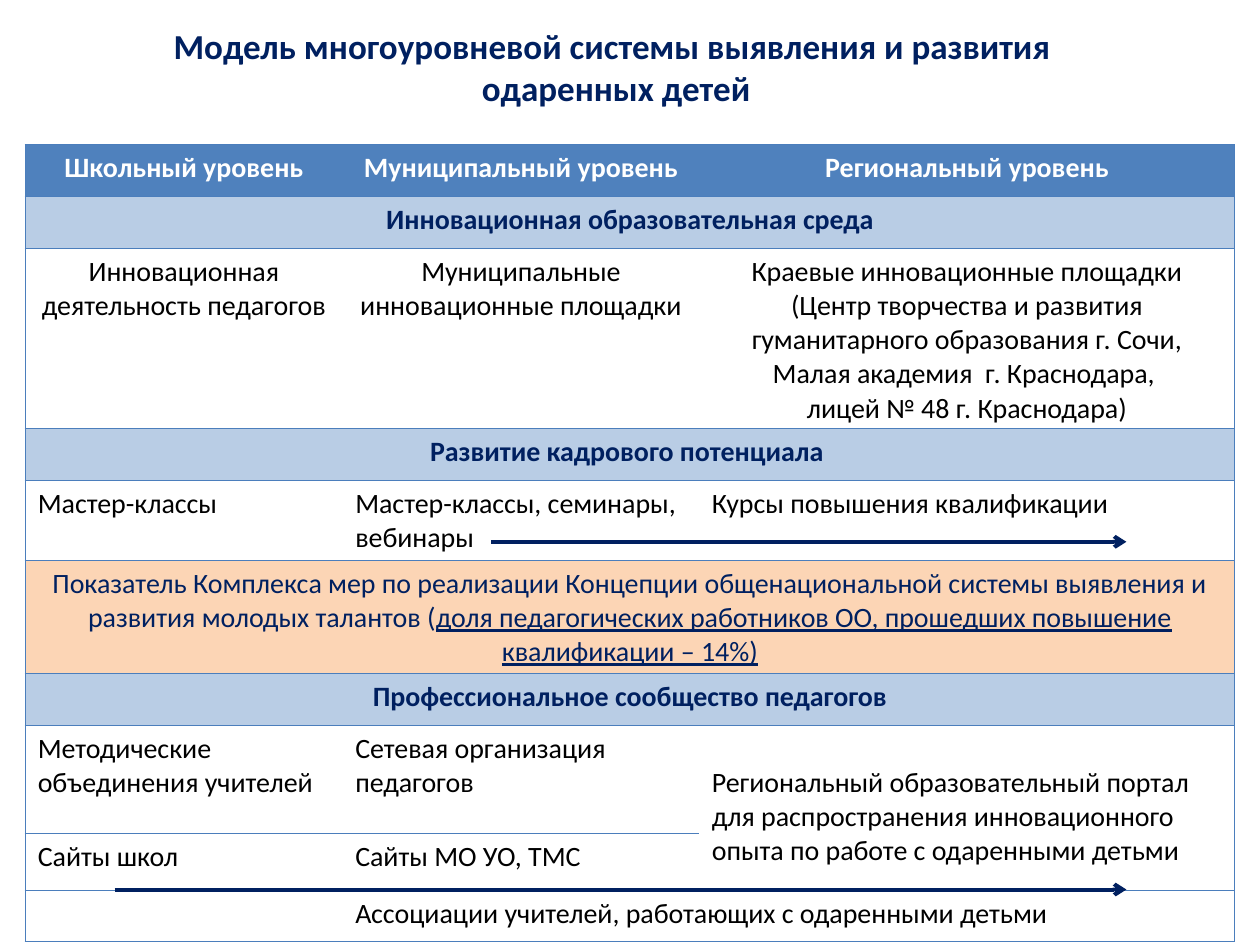
from lxml.etree import SubElement
from pptx import Presentation
from pptx.dml.color import RGBColor
from pptx.enum.shapes import MSO_CONNECTOR
from pptx.enum.text import MSO_ANCHOR, PP_ALIGN
from pptx.oxml.ns import qn
from pptx.util import Inches, Pt

NAVY = RGBColor(0x00, 0x20, 0x60)
BLACK = RGBColor(0x00, 0x00, 0x00)
WHITE = RGBColor(0xFF, 0xFF, 0xFF)
BLUE = RGBColor(0x4F, 0x81, 0xBD)
PALE_BLUE = RGBColor(0xB9, 0xCD, 0xE5)
PEACH = RGBColor(0xFC, 0xD5, 0xB5)
BORDER = RGBColor(0x4B, 0x7E, 0xBC)

FONT = "Calibri"
NO_STYLE = "{2D5ABB26-0587-4C30-8999-92F81FD0307C}"
COLUMNS = [2.52, 2.83, 4.25]
ROW_HEIGHT = 0.41
TALL_ROWS = {7: 0.86, 8: 0.45}
LEFT, TOP = 0.2, 1.15
ARROW_END = 8.94

# Row kind: fill, text colour, bold, alignment
STYLES = {
    "header": (BLUE, WHITE, True, PP_ALIGN.CENTER),
    "section": (PALE_BLUE, NAVY, True, PP_ALIGN.CENTER),
    "indicator": (PEACH, NAVY, False, PP_ALIGN.CENTER),
    "centred": (WHITE, BLACK, False, PP_ALIGN.CENTER),
    "plain": (WHITE, BLACK, False, PP_ALIGN.LEFT),
}
ROWS = [
    ("header", ["Школьный уровень", "Муниципальный уровень", "Региональный уровень"]),
    ("section", ["Инновационная образовательная среда"]),
    ("centred", [
        "Инновационная деятельность педагогов",
        "Муниципальные инновационные площадки",
        "Краевые инновационные площадки (Центр творчества и развития "
        "гуманитарного образования г. Сочи, Малая академия  г. Краснодара, \n"
        "лицей № 48 г. Краснодара)",
    ]),
    ("section", ["Развитие кадрового потенциала "]),
    ("plain", ["Мастер-классы", "Мастер-классы, семинары, вебинары",
               "Курсы повышения квалификации"]),
    ("indicator", [
        "Показатель Комплекса мер по реализации Концепции общенациональной "
        "системы выявления и развития молодых талантов ("]),
    ("section", ["Профессиональное сообщество педагогов"]),
    ("plain", [
        "Методические объединения учителей",
        "Сетевая организация педагогов",
        "Региональный образовательный портал для распространения "
        "инновационного опыта по работе с одаренными детьми",
    ]),
    ("plain", ["Сайты школ", "Сайты МО УО, ТМС"]),
    ("plain", ["", "Ассоциации учителей, работающих с одаренными детьми"]),
]
INDICATOR_ROW, PORTAL_ROW, LAST_ROW = 5, 7, 9
INDICATOR_SHARE = ("доля педагогических работников ОО, прошедших повышение "
                   "квалификации – 14%)")


def style_paragraph(p, size, color, bold, align):
    p.alignment = align
    p.font.name = FONT
    p.font.size = Pt(size)
    p.font.bold = bold
    p.font.color.rgb = color


def add_title(slide):
    box = slide.shapes.add_textbox(Inches(0.28), Inches(0.3), Inches(9.22), Inches(0.46))
    tf = box.text_frame
    tf.word_wrap = True
    tf.vertical_anchor = MSO_ANCHOR.MIDDLE
    tf.text = "Модель многоуровневой системы выявления и развития \vодаренных детей"
    style_paragraph(tf.paragraphs[0], 20, NAVY, True, PP_ALIGN.CENTER)


def set_borders(cell, sides):
    tcPr = cell._tc.get_or_add_tcPr()
    for side in sides:
        ln = SubElement(tcPr, qn(f"a:ln{side}"), w=str(Pt(0.75)))
        fill = SubElement(ln, qn("a:solidFill"))
        SubElement(fill, qn("a:srgbClr"), val=str(BORDER))


def merge_cells(table):
    last = len(COLUMNS) - 1
    for row, (_, texts) in enumerate(ROWS):
        if len(texts) == 1:
            table.cell(row, 0).merge(table.cell(row, last))
    table.cell(PORTAL_ROW, last).merge(table.cell(PORTAL_ROW + 1, last))
    table.cell(LAST_ROW, 1).merge(table.cell(LAST_ROW, last))


def fill_cell(cell, text, kind, col):
    fill, color, bold, align = STYLES[kind]
    at_right = col + max(cell.span_width, 1) == len(COLUMNS)
    set_borders(cell, ("L" if col == 0 else "") + ("R" if at_right else "") + "TB")
    cell.fill.solid()
    cell.fill.fore_color.rgb = fill
    cell.text = text
    for p in cell.text_frame.paragraphs:
        style_paragraph(p, 16, color, bold, align)


def add_levels_table(slide):
    frame = slide.shapes.add_table(
        len(ROWS), len(COLUMNS), Inches(LEFT), Inches(TOP),
        Inches(sum(COLUMNS)), Inches(ROW_HEIGHT * len(ROWS)))
    table = frame.table
    table.first_row = table.horz_banding = False
    table._tbl.tblPr.find(qn("a:tableStyleId")).text = NO_STYLE
    for col, width in enumerate(COLUMNS):
        table.columns[col].width = Inches(width)
    merge_cells(table)
    for row, (kind, texts) in enumerate(ROWS):
        table.rows[row].height = Inches(TALL_ROWS.get(row, ROW_HEIGHT))
        for col, text in enumerate(texts):
            fill_cell(table.cell(row, col), text, kind, col)

    r = table.cell(INDICATOR_ROW, 0).text_frame.paragraphs[0].add_run()
    r.text = INDICATOR_SHARE
    r.font.underline = True
    table.cell(PORTAL_ROW, 2).margin_top = Inches(0.32)


def add_arrow(slide, start, y):
    line = slide.shapes.add_connector(
        MSO_CONNECTOR.STRAIGHT, Inches(start), Inches(y), Inches(ARROW_END), Inches(y))
    line.line.color.rgb = NAVY
    line.line.width = Pt(2.25)
    SubElement(line.line._get_or_add_ln(), qn("a:tailEnd"), type="arrow")
    SubElement(line._element.spPr, qn("a:effectLst"))


def main():
    prs = Presentation()
    prs.slide_width, prs.slide_height = Inches(10), Inches(7.5)
    slide = prs.slides.add_slide(prs.slide_layouts[6])
    add_title(slide)
    add_levels_table(slide)
    add_arrow(slide, 0.91, 7.06)
    add_arrow(slide, 3.9, 4.3)
    prs.save("out.pptx")


if __name__ == "__main__":
    main()
